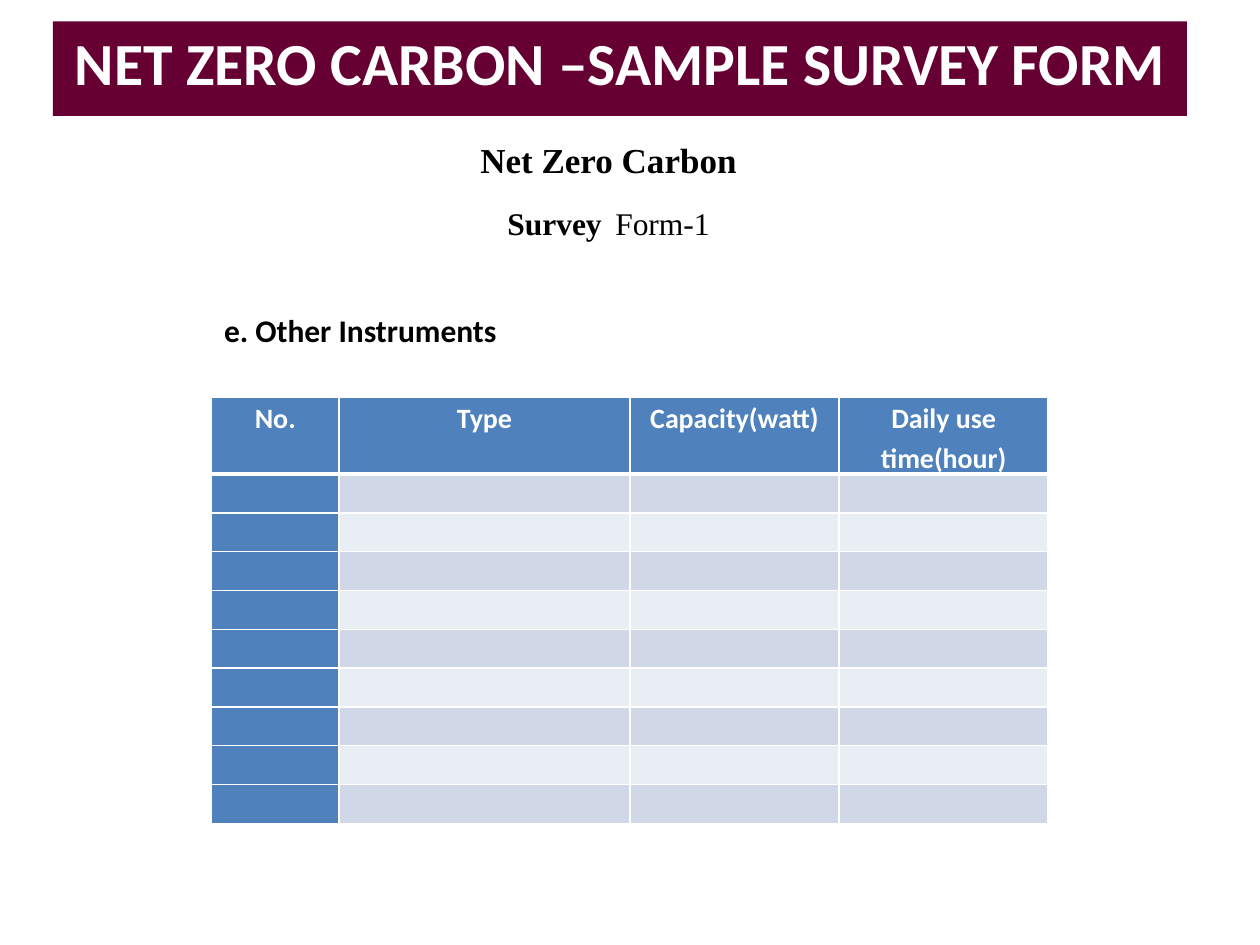
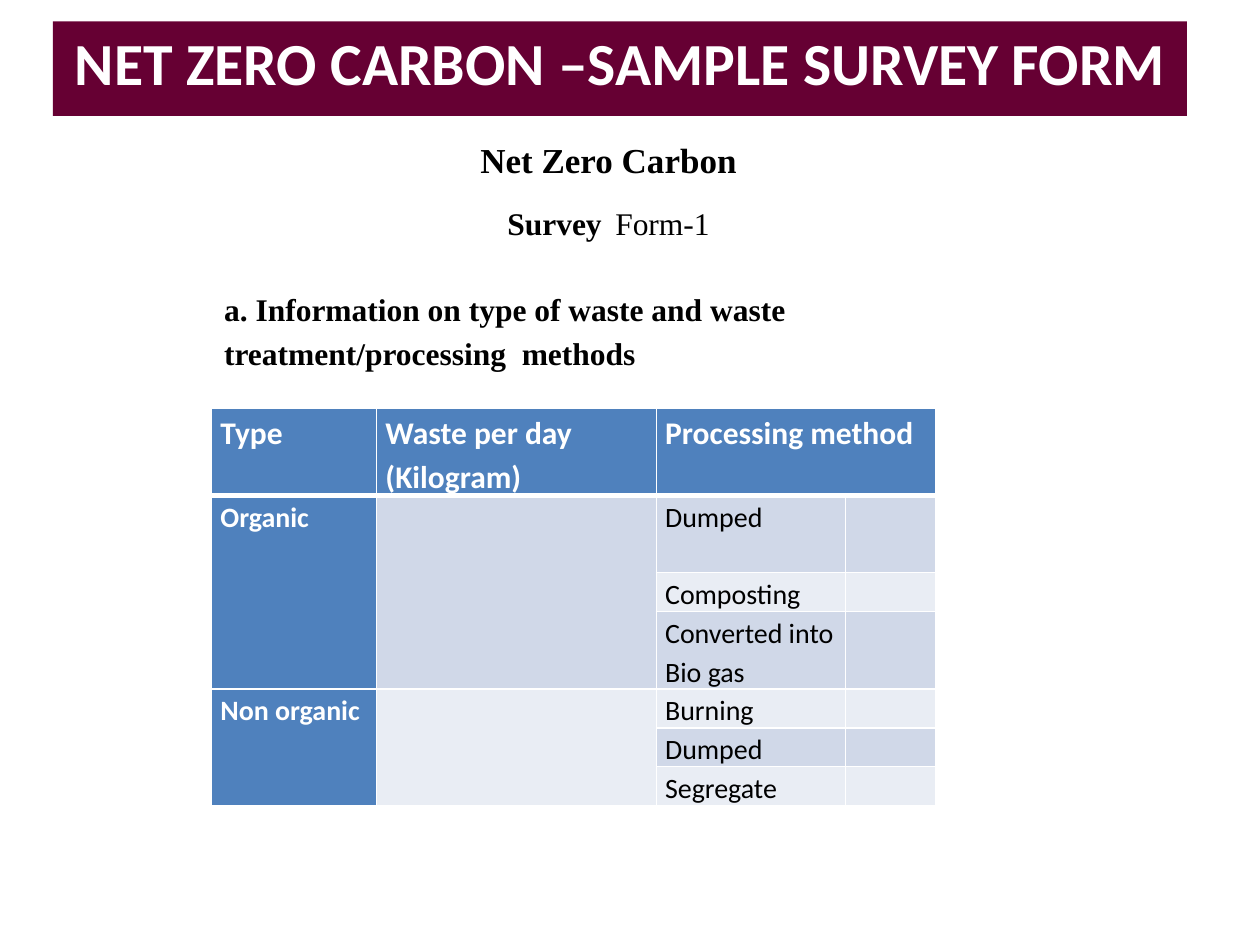
from lxml.etree import SubElement
from pptx import Presentation
from pptx.dml.color import RGBColor
from pptx.enum.text import MSO_ANCHOR as Anchor, MSO_AUTO_SIZE as AutoSize, PP_ALIGN as Align
from pptx.oxml.ns import qn
from pptx.util import Inches, Pt

PLUM = RGBColor(0x66, 0x00, 0x33)
BLUE = RGBColor(0x4F, 0x81, 0xBD)
BAND_DARK = RGBColor(0xD0, 0xD8, 0xE8)
BAND_LIGHT = RGBColor(0xE9, 0xED, 0xF4)
WHITE = RGBColor(0xFF, 0xFF, 0xFF)
BLACK = RGBColor(0x00, 0x00, 0x00)
SANS, SERIF = "Calibri", "Times New Roman"
GRID_COLUMNS, GRID_ROWS = 100, 75
TITLE_ONLY = 5
TABLE_LEFT = 16.8


def write(paragraph, text, font=SANS, size=16, bold=True, color=BLACK,
          align=None, spacing=None, after=None):
    """Append a run to the paragraph and set any paragraph format given."""
    run = paragraph.add_run()
    run.text = text
    run.font.name, run.font.size, run.font.bold = font, Pt(size), bold
    run.font.color.rgb = color
    if align is not None:
        paragraph.alignment = align
    if spacing is not None:
        paragraph.line_spacing = spacing
    if after is not None:
        paragraph.space_after = Pt(after)


def draw_borders(cell, bottom):
    properties = cell._tc.get_or_add_tcPr()
    for side, width in (("L", 1), ("R", 1), ("T", 1), ("B", bottom)):
        line = SubElement(properties, qn(f"a:ln{side}"), w=str(Pt(width)))
        fill = SubElement(line, qn("a:solidFill"))
        SubElement(fill, qn("a:srgbClr"), val=str(WHITE))


class SurveyDeck:
    """Holds the shared style and the slide being built."""

    def __init__(self):
        self.presentation = Presentation()
        self.presentation.slide_width = Inches(10)
        self.presentation.slide_height = Inches(7.5)
        self.slide = None

    def across(self, columns):
        return round(self.presentation.slide_width * columns / GRID_COLUMNS)

    def down(self, rows):
        return round(self.presentation.slide_height * rows / GRID_ROWS)

    def box(self, left, top, width, height):
        return self.across(left), self.down(top), self.across(width), self.down(height)

    def add_slide(self):
        layout = self.presentation.slide_layouts[TITLE_ONLY]
        self.slide = self.presentation.slides.add_slide(layout)
        self.add_title("NET ZERO CARBON –SAMPLE SURVEY FORM")
        self.add_form_name()

    def add_title(self, text):
        title = self.slide.shapes.title
        title.left, title.top, title.width, title.height = self.box(4.2, 1.7, 90, 7.5)
        title.fill.solid()
        title.fill.fore_color.rgb = PLUM
        frame = title.text_frame
        frame.auto_size, frame.word_wrap = AutoSize.NONE, True
        frame.vertical_anchor = Anchor.MIDDLE
        write(frame.paragraphs[0], text, size=34.1, color=WHITE,
              align=Align.CENTER, spacing=0.8)

    def add_text_box(self, *place):
        frame = self.slide.shapes.add_textbox(*self.box(*place)).text_frame
        frame.word_wrap = True
        frame.auto_size = AutoSize.SHAPE_TO_FIT_TEXT
        return frame

    def add_form_name(self):
        frame = self.add_text_box(23.3, 10, 50, 9.5)
        centred = dict(align=Align.CENTER, spacing=1.15, after=10)
        write(frame.paragraphs[0], "Net Zero Carbon", font=SERIF, size=20, **centred)
        form = frame.add_paragraph()
        write(form, "Survey ", font=SERIF, size=18, **centred)
        write(form, " ", size=14)
        write(form, "Form-1", font=SERIF, size=18, bold=False)

    def add_heading(self, text, place, **text_format):
        write(self.add_text_box(*place).paragraphs[0], text, size=18, **text_format)

    def add_table(self, top, widths, heights, rows, merges=(), header_size=16, align=Align.LEFT):
        """Build a banded table; a merge is (first row, first column, last row, last column)."""
        place = self.box(TABLE_LEFT, top, sum(widths), sum(heights))
        table = self.slide.shapes.add_table(len(rows), len(widths), *place).table
        for column, width in zip(table.columns, widths):
            column.width = self.across(width)
        for index, (row, height, texts) in enumerate(zip(table.rows, heights, rows)):
            row.height = self.down(height)
            band = BAND_DARK if index % 2 else BAND_LIGHT
            for position, (cell, text) in enumerate(zip(row.cells, texts)):
                accented = index == 0 or position == 0
                cell.margin_left = cell.margin_right = Inches(0.07)
                cell.margin_top = cell.margin_bottom = 0
                draw_borders(cell, bottom=1 if index else 3)
                cell.fill.solid()
                cell.fill.fore_color.rgb = BLUE if accented else band
                if text:
                    write(cell.text_frame.paragraphs[0], text, bold=accented,
                          size=16 if index else header_size,
                          color=WHITE if accented else BLACK,
                          align=align, spacing=1.15)
        for first_row, first_column, last_row, last_column in merges:
            table.cell(first_row, first_column).merge(table.cell(last_row, last_column))


def build_instruments(deck):
    deck.add_slide()
    header = ["No.", "Type", "Capacity(watt)", "Daily use time(hour)"]
    entries = 9
    deck.add_table(31.5, [10.1, 23.1, 16.6, 16.6], [6.1] + [3.08] * entries,
                   [header] + [[""] * len(header)] * entries, align=Align.CENTER)
    deck.add_heading("e. Other Instruments", (TABLE_LEFT, 24.2, 27.4, 4))


def build_waste(deck):
    deck.add_slide()
    single, double = 3.08, 6.15
    rows = [
        ["Type", "Waste per day (Kilogram)", "Processing method", ""],
        ["Organic", "", "Dumped", ""],
        ["", "", "Composting", ""],
        ["", "", "Converted into Bio gas", ""],
        ["Non organic", "", "Burning", ""],
        ["", "", "Dumped", ""],
        ["", "", "Segregate", ""],
    ]
    groups = [(start, column, start + 2, column) for start in (1, 4) for column in (0, 1)]
    deck.add_table(32.4, [13.1, 22.2, 15, 7.2],
                   [6.9, double, single, double] + [single] * 3,
                   rows, merges=[(0, 2, 0, 3)] + groups, header_size=18)
    deck.add_heading("a. Information on type of waste and waste treatment/processing  methods",
                     (TABLE_LEFT, 22.1, 59.9, 7.8), font=SERIF, spacing=1.15, after=10)


def main():
    deck = SurveyDeck()
    build_instruments(deck)
    build_waste(deck)
    deck.presentation.save("out.pptx")


if __name__ == "__main__":
    main()
